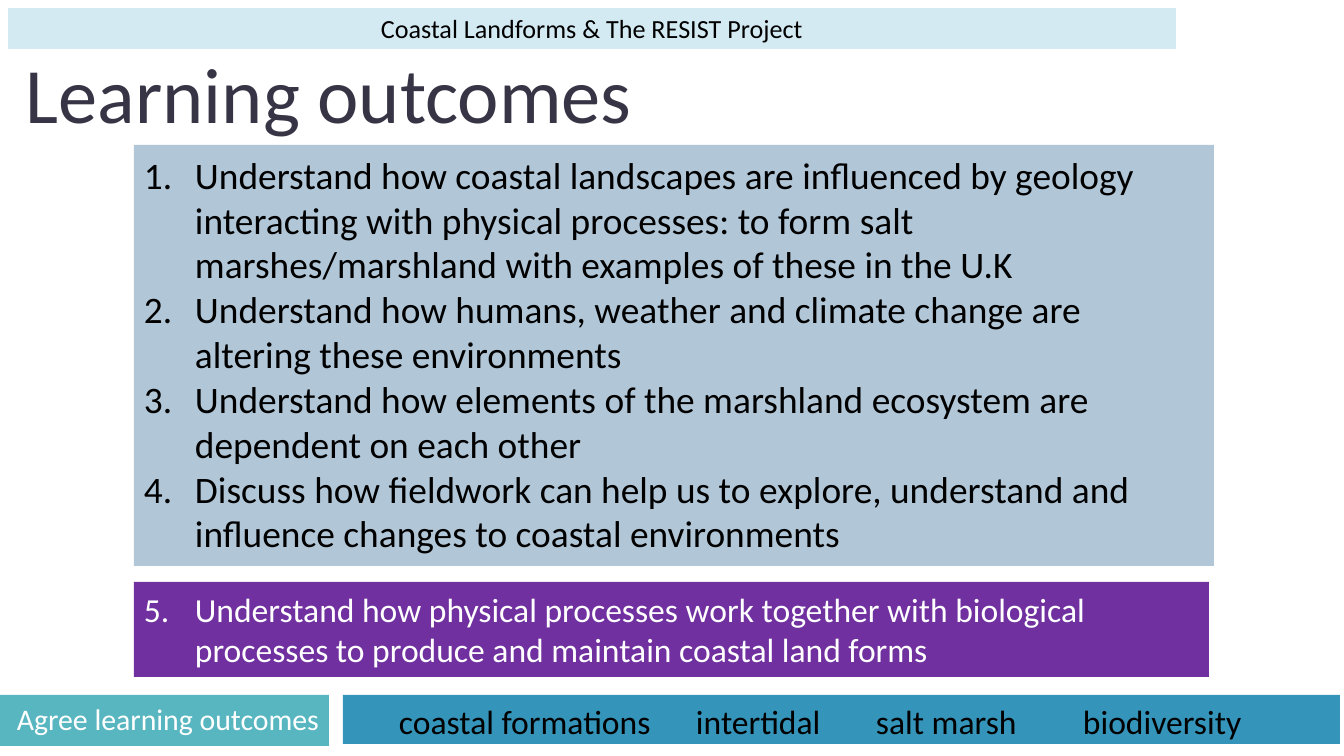
from pptx import Presentation
from pptx.dml.color import RGBColor
from pptx.enum.shapes import MSO_SHAPE
from pptx.enum.text import MSO_ANCHOR, MSO_AUTO_SIZE, PP_ALIGN
from pptx.oxml.ns import qn
from pptx.util import Pt
from lxml import etree

RECT = MSO_SHAPE.RECTANGLE
TOP, MIDDLE = MSO_ANCHOR.TOP, MSO_ANCHOR.MIDDLE
LEFT, CENTER = PP_ALIGN.LEFT, PP_ALIGN.CENTER
NO_FIT = MSO_AUTO_SIZE.NONE

# Content
HEADER = "Coastal Landforms & The RESIST Project"
TITLE = "Learning outcomes"
OUTCOMES = [
    "Understand how coastal landscapes are influenced by geology interacting "
    "with physical processes: to form salt marshes/marshland with examples of "
    "these in the U.K",
    "Understand how humans, weather and climate change are altering these environments",
    "Understand how elements of the marshland ecosystem are dependent on each other",
    "Discuss how fieldwork can help us to explore, understand and influence "
    "changes to coastal environments",
]
EXTRA_OUTCOME = [
    "Understand how physical processes work together with biological processes "
    "to produce and maintain coastal land forms",
]
TASK = "Agree learning outcomes"
KEYWORDS = ["coastal formations", "intertidal", "salt marsh", "biodiversity"]
KEYWORD_STOPS = [297, 477, 684]

FONT = "Calibri"
COLORS = {
    "teal": "58B6C0", "blue": "3494BA", "pale": "D4EAF3", "steel": "B1C6D7",
    "purple": "7030A0", "slate": "373545", "black": "000000", "white": "FFFFFF",
}
PX = 914400 / 134.4
INDENT = 51


def px(length):
    return round(length * PX)


def color(name):
    return RGBColor.from_string(COLORS[name])


def place(box, area):
    box.left, box.top, box.width, box.height = map(px, area)


def paint(box, fill):
    box.fill.solid()
    box.fill.fore_color.rgb = color(fill)


def add_panel(page, area, fill):
    panel = page.shapes.add_shape(RECT, *map(px, area))
    panel.shadow.inherit = False
    paint(panel, fill)
    panel.line.fill.background()
    return panel


def write(box, lines, size, ink, margins=(13, 7), anchor=TOP, align=LEFT, start=None):
    """Fill a box with paragraphs, numbered from start when it is given."""
    frame = box.text_frame
    frame.word_wrap = True
    frame.auto_size = NO_FIT
    frame.vertical_anchor = anchor
    frame.margin_left = frame.margin_right = px(margins[0])
    frame.margin_top = frame.margin_bottom = px(margins[1])
    for index, line in enumerate(lines):
        para = frame.add_paragraph() if index else frame.paragraphs[0]
        para.alignment = align
        para.line_spacing = 1.0
        para.space_before = para.space_after = Pt(0)
        if start:
            properties = para._p.get_or_add_pPr()
            properties.set("marL", str(px(INDENT)))
            properties.set("indent", str(-px(INDENT)))
            bullet_font = etree.SubElement(properties, qn("a:buFont"))
            bullet_font.set("typeface", FONT)
            number = etree.SubElement(properties, qn("a:buAutoNum"))
            number.set("type", "arabicPeriod")
            if start > 1:
                number.set("startAt", str(start))
        span = para.add_run()
        span.text = line
        span.font.name = FONT
        span.font.size = Pt(size)
        span.font.color.rgb = color(ink)


def add_tab_stops(para, stops):
    tabs = etree.SubElement(para._p.get_or_add_pPr(), qn("a:tabLst"))
    for stop in stops:
        etree.SubElement(tabs, qn("a:tab"), pos=str(px(stop)), algn="l")


def main():
    deck = Presentation()
    deck.slide_width, deck.slide_height = px(1344), px(756)
    page = deck.slides.add_slide(deck.slide_layouts[1])

    # Title and main list
    title, outcomes = page.shapes.title, page.placeholders[1]
    place(title, (16, 35, 1199, 148))
    write(title, [TITLE], 42, "slate", margins=(10, 10))
    place(outcomes, (134, 145, 1080, 421))
    paint(outcomes, "steel")
    write(outcomes, OUTCOMES, 20, "black", margins=(10, 7), start=1)

    # Further outcome
    extra = add_panel(page, (134, 582, 1075, 95), "purple")
    write(extra, EXTRA_OUTCOME, 18, "white", margins=(10, 7), start=5)

    # Header band
    header = add_panel(page, (4, 4, 1176, 49), "pale")
    header.line.color.rgb = color("white")
    header.line.width = Pt(4.5)
    write(header, [HEADER], 14, "black", anchor=MIDDLE, align=CENTER)

    # Footer bands and their labels
    add_panel(page, (-1, 695, 330, 51), "teal")
    add_panel(page, (343, 695, 997, 49), "blue")
    keywords = page.shapes.add_textbox(*map(px, (379, 694, 961, 54)))
    write(keywords, ["\t".join(KEYWORDS)], 18, "black", margins=(20, 7))
    add_tab_stops(keywords.text_frame.paragraphs[0], KEYWORD_STOPS)
    task = page.shapes.add_textbox(*map(px, (4, 694, 340, 50)))
    write(task, [TASK], 16, "white")

    deck.save("out.pptx")


if __name__ == "__main__":
    main()
